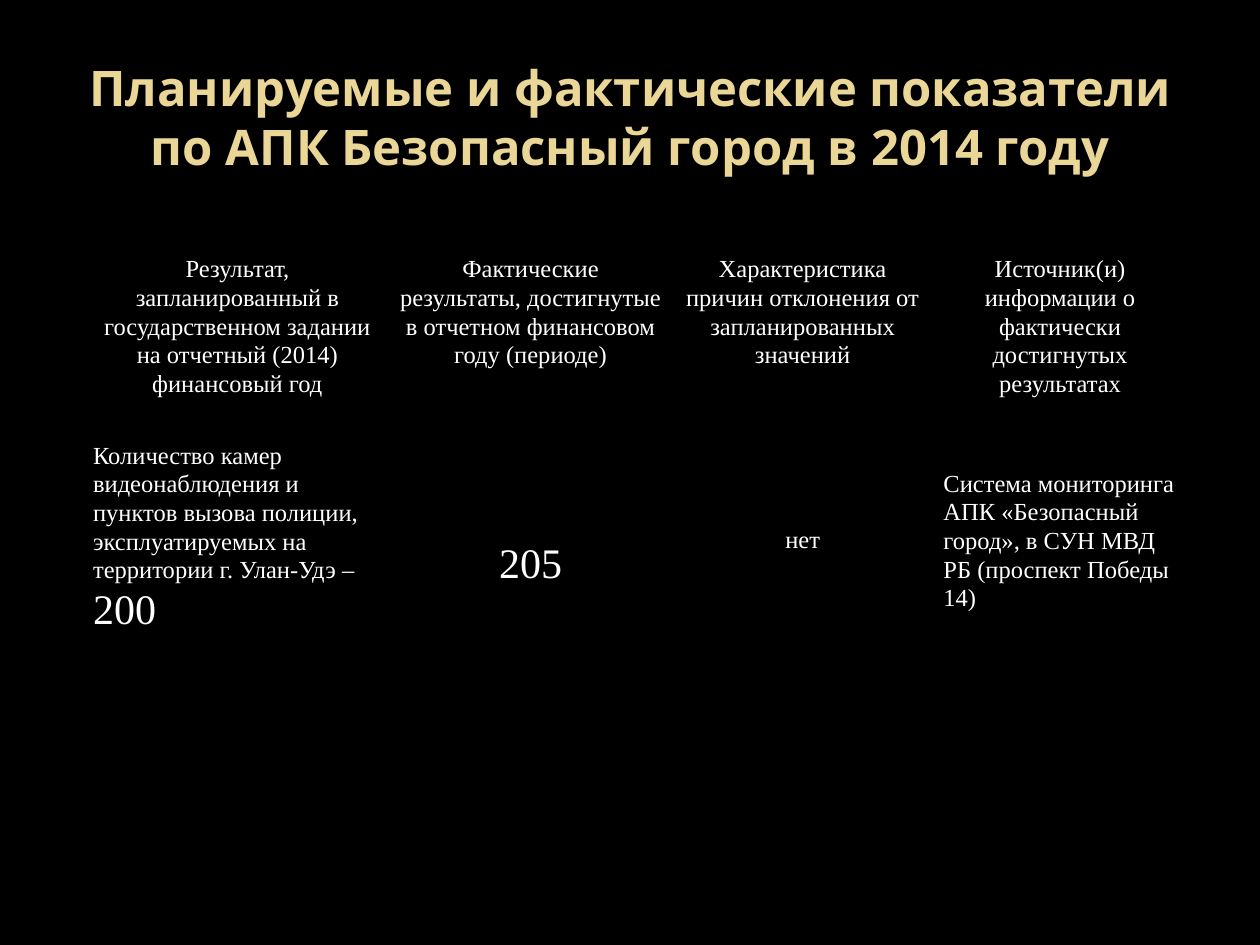
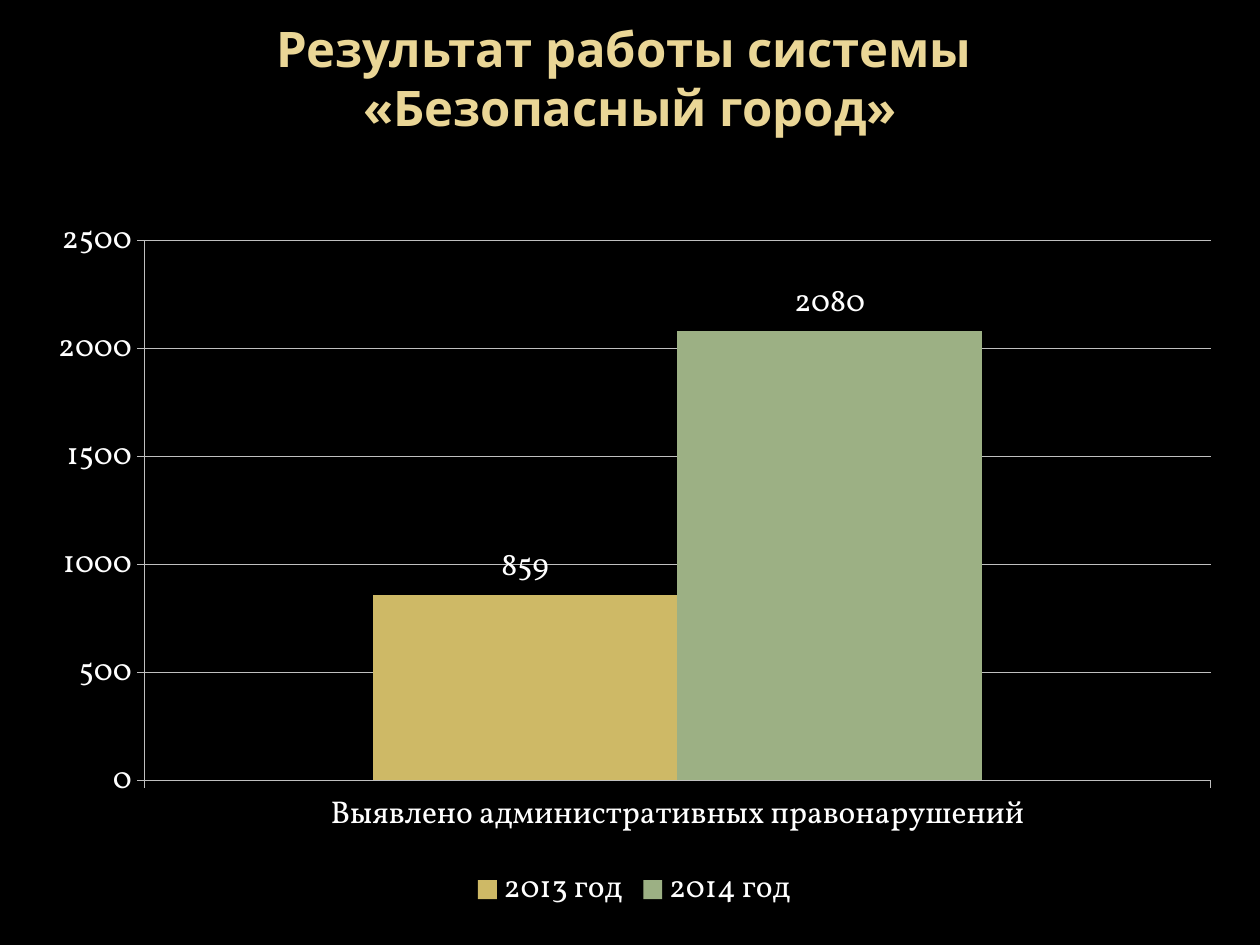
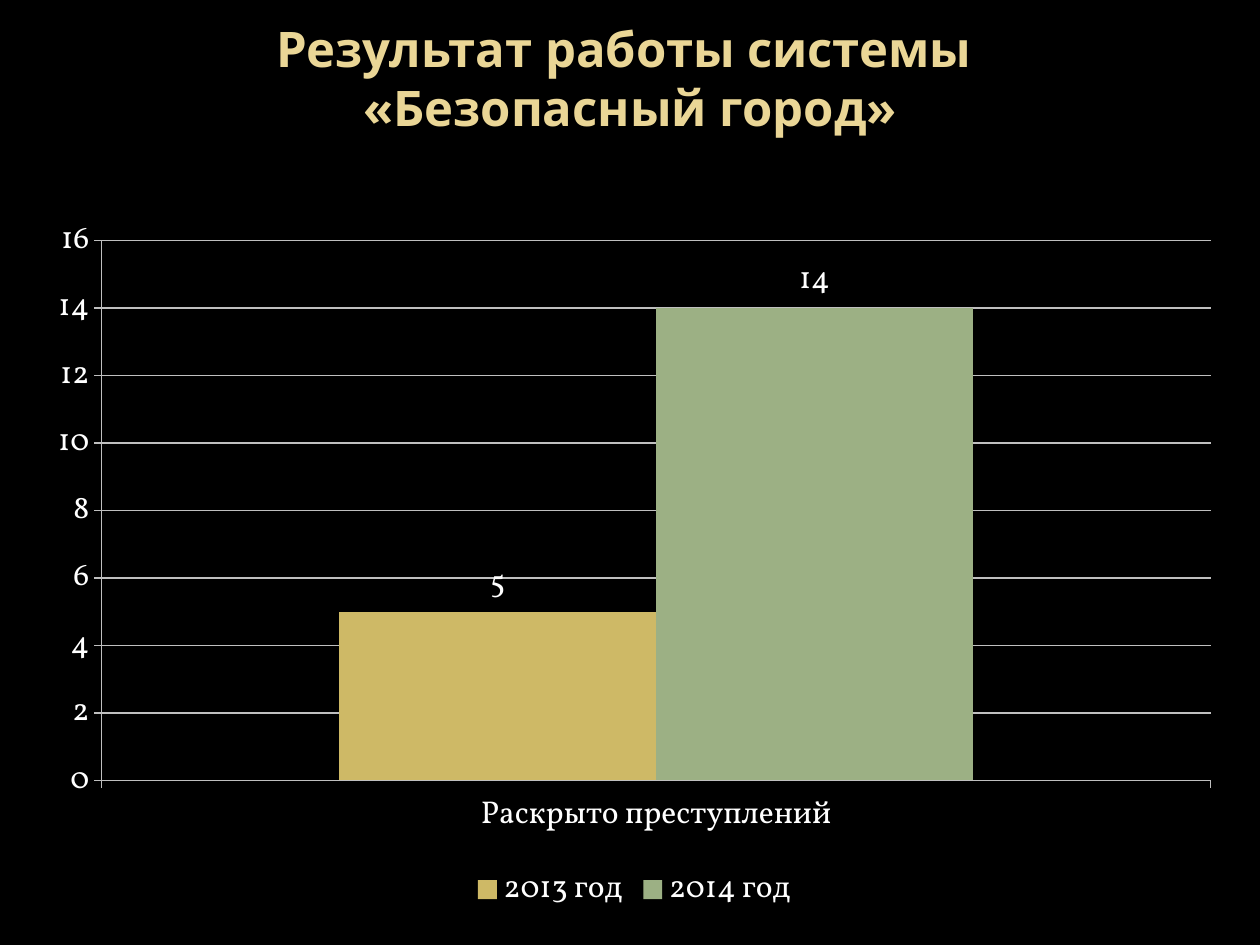
from lxml import etree
from pptx import Presentation
from pptx.chart.data import CategoryChartData as ChartData
from pptx.dml.color import RGBColor
from pptx.enum.chart import XL_CHART_TYPE as Kind
from pptx.enum.chart import XL_LABEL_POSITION as Spot
from pptx.enum.chart import XL_LEGEND_POSITION as Side
from pptx.enum.chart import XL_TICK_MARK as Tick
from pptx.enum.text import MSO_ANCHOR as Anchor
from pptx.enum.text import MSO_AUTO_SIZE as Fit
from pptx.enum.text import PP_ALIGN as Align
from pptx.oxml import parse_xml
from pptx.util import Pt

BLACK = RGBColor(0x00, 0x00, 0x00)
WHITE = RGBColor(0xFF, 0xFF, 0xFF)
CREAM = RGBColor(0xEA, 0xD6, 0x96)
GOLD = RGBColor(0xCE, 0xB9, 0x66)
GREEN = RGBColor(0x9C, 0xB0, 0x84)
GREY = RGBColor(0xBF, 0xBF, 0xBF)

HEAD_FONT = "Noto Sans"
CELL_FONT = "Times New Roman"
PLOT_FONT = "Vollkorn"
NS = "http://schemas.openxmlformats.org/drawingml/2006/main"

PLAN = "Планируемые и фактические показатели по АПК Безопасный город в 2014 году"
RESULT = "Результат работы системы \v«Безопасный город»"
YEARS = [("2013 год", GOLD), ("2014 год", GREEN)]
PLOTS = [
    ("Выявлено административных правонарушений", [859, 2080]),
    ("Раскрыто преступлений", [5, 14]),
]
WIDTHS = [175, 160, 151, 143.3]
HEIGHTS = [106.5, 140]
HEADS = [
    "Результат, запланированный в государственном задании на отчетный (2014) финансовый год",
    "Фактические результаты, достигнутые в отчетном финансовом году (периоде)",
    "Характеристика причин отклонения от запланированных значений",
    "Источник(и) информации о фактически достигнутых результатах",
]
CAMERAS = ("Количество камер видеонаблюдения и пунктов вызова полиции, "
           "эксплуатируемых на территории г. Улан-Удэ – ")
SOURCE = "Система мониторинга АПК «Безопасный город», в СУН МВД РБ (проспект Победы 14)"


def style(font, name, size, color, bold=False):
    font.name = name
    font.size = Pt(size)
    font.bold = bold
    font.color.rgb = color


def add_slide(deck, text, top, height):
    slide = deck.slides.add_slide(deck.slide_layouts[5])
    title = slide.shapes.title
    title.left, title.top = Pt(36), Pt(top)
    title.width, title.height = Pt(648), Pt(height)
    frame = title.text_frame
    frame.text = text
    frame.word_wrap = True
    frame.auto_size = Fit.NONE
    frame.vertical_anchor = Anchor.MIDDLE
    para = frame.paragraphs[0]
    para.alignment = Align.CENTER
    for run in para.runs:
        style(run.font, HEAD_FONT, 28, CREAM, True)
    return slide


def add_edges(cell):
    props = cell._tc.get_or_add_tcPr()
    for spot, side in enumerate("LRTB"):
        edge = parse_xml(f'<a:ln{side} xmlns:a="{NS}" w="{Pt(1)}"/>')
        fill = etree.SubElement(edge, f"{{{NS}}}solidFill")
        etree.SubElement(fill, f"{{{NS}}}srgbClr", val=str(BLACK))
        props.insert(spot, edge)


def fill_cell(cell, parts, align=Align.CENTER, anchor=Anchor.TOP, top=0):
    cell.fill.background()
    add_edges(cell)
    cell.margin_left = cell.margin_right = Pt(5)
    cell.margin_top, cell.margin_bottom = Pt(top), Pt(0)
    cell.vertical_anchor = anchor
    para = cell.text_frame.paragraphs[0]
    para.alignment = align
    para.line_spacing = 1.06
    for text, size in parts:
        run = para.add_run()
        run.text = text
        style(run.font, CELL_FONT, size, WHITE)


def add_grid(slide):
    frame = slide.shapes.add_table(
        2, 4, Pt(48.2), Pt(145.4), Pt(sum(WIDTHS)), Pt(sum(HEIGHTS)))
    table = frame.table
    table.first_row = table.horz_banding = False
    for col, width in zip(table.columns, WIDTHS):
        col.width = Pt(width)
    for row, height in zip(table.rows, HEIGHTS):
        row.height = Pt(height)
    for col, text in enumerate(HEADS):
        fill_cell(table.cell(0, col), [(text, 14)])
    fill_cell(table.cell(1, 0), [(CAMERAS, 14), ("200", 24)], Align.LEFT)
    fill_cell(table.cell(1, 1), [("205", 24)], anchor=Anchor.MIDDLE)
    fill_cell(table.cell(1, 2), [("нет", 14)], top=48)
    fill_cell(table.cell(1, 3), [(SOURCE, 14)], Align.LEFT, top=16)


def set_line(line):
    line.color.rgb = GREY
    line.width = Pt(0.75)


def add_plot(slide, label, vals):
    data = ChartData()
    data.categories = [label]
    for (year, _), val in zip(YEARS, vals):
        data.add_series(year, [val])
    chart = slide.shapes.add_chart(
        Kind.COLUMN_CLUSTERED, Pt(19.5), Pt(116.6), Pt(686), Pt(408.2), data).chart
    style(chart.font, PLOT_FONT, 18, WHITE)
    chart.has_title = False
    chart.has_legend = True
    chart.legend.position = Side.BOTTOM
    chart.legend.include_in_layout = False
    for axis in (chart.category_axis, chart.value_axis):
        axis.major_tick_mark = Tick.OUTSIDE
        axis.minor_tick_mark = Tick.NONE
        set_line(axis.format.line)
    chart.value_axis.has_major_gridlines = True
    set_line(chart.value_axis.major_gridlines.format.line)
    plot = chart.plots[0]
    plot.vary_by_categories = False
    plot.gap_width = 150
    plot.overlap = 0
    for bar, (_, color) in zip(plot.series, YEARS):
        bar.format.fill.solid()
        bar.format.fill.fore_color.rgb = color
        bar.data_labels.show_value = True
        bar.data_labels.position = Spot.OUTSIDE_END


def main():
    deck = Presentation()
    deck.slide_width, deck.slide_height = Pt(720), Pt(540)
    back = deck.slide_master.background.fill
    back.solid()
    back.fore_color.rgb = BLACK
    add_grid(add_slide(deck, PLAN, 21.6, 90))
    for label, vals in PLOTS:
        add_plot(add_slide(deck, RESULT, 5, 78.5), label, vals)
    deck.save("out.pptx")


if __name__ == "__main__":
    main()
